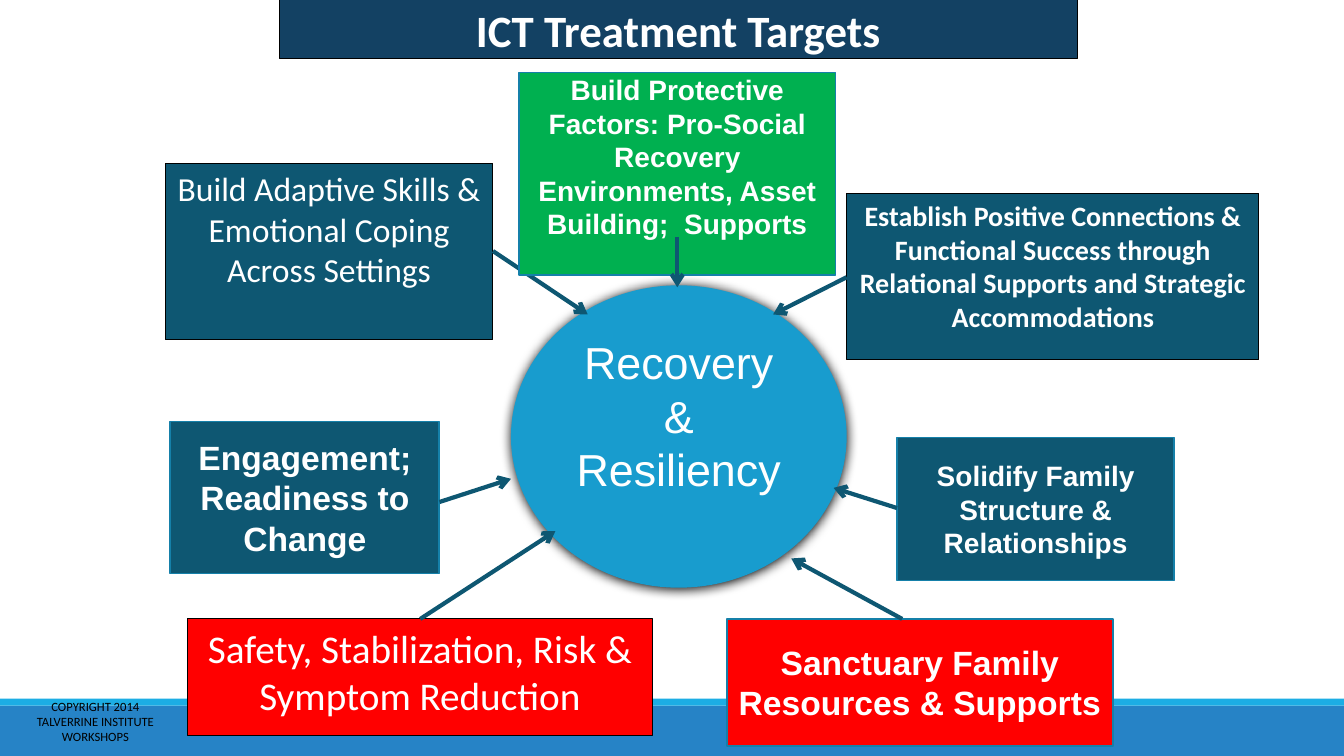
from dataclasses import dataclass
from typing import Optional

from lxml.etree import SubElement
from pptx import Presentation
from pptx.dml.color import RGBColor
from pptx.enum.shapes import MSO_CONNECTOR, MSO_SHAPE
from pptx.enum.text import MSO_ANCHOR, PP_ALIGN
from pptx.oxml.ns import qn
from pptx.shapes.autoshape import Shape
from pptx.slide import Slide
from pptx.util import Pt


@dataclass(frozen=True)
class Theme:
    teal: str = "0E5772"
    red: str = "FF0000"
    green: str = "00B050"
    hub: str = "189CCE"
    navy: str = "134163"
    footer: str = "2683C6"
    footer_edge: str = "1CADE4"
    rim: str = "1580A9"
    black: str = "000000"
    white: str = "FFFFFF"
    serene: str = "Calibri"
    plain: str = "Arial"
    tiny: float = 9
    small: float = 20
    medium: float = 24
    large: float = 28
    title: float = 32


THEME = Theme()


@dataclass(frozen=True)
class Area:
    left: float
    top: float
    width: float
    height: float


@dataclass(frozen=True)
class Arrow:
    start: tuple[float, float]
    end: tuple[float, float]


@dataclass(frozen=True)
class Target:
    text: str
    area: Area
    arrow: Arrow
    size: float
    fill: str = THEME.teal
    font: str = THEME.plain
    bold: bool = True
    line: str = THEME.rim
    line_width: float = 1.25
    anchor: MSO_ANCHOR = MSO_ANCHOR.MIDDLE
    inset: float = 3.6


# Targets around the hub, from back to front
TARGETS = [
    Target("Build Adaptive Skills & Emotional Coping Across Settings",
           Area(118, 116.6, 234, 126), Arrow((352.1, 179.3), (419.8, 224.6)),
           THEME.medium, font=THEME.serene, bold=False,
           line=THEME.black, line_width=0.75, anchor=MSO_ANCHOR.TOP),
    Target("Establish Positive Connections & Functional Success through "
           "Relational Supports and Strategic Accommodations",
           Area(604.8, 138.2, 294.5, 118.8), Arrow((604.8, 198), (552.2, 224.6)),
           THEME.small, font=THEME.serene,
           line=THEME.black, line_width=0.75, anchor=MSO_ANCHOR.TOP),
    Target("Safety, Stabilization, Risk & Symptom Reduction",
           Area(133.9, 442.1, 331.9, 83.5), Arrow((300.2, 442.1), (396.7, 379.4)),
           THEME.large, fill=THEME.red, font=THEME.serene, bold=False,
           line=THEME.black, line_width=0.75, anchor=MSO_ANCHOR.TOP),
    Target("Engagement; Readiness to Change",
           Area(121.7, 301, 192.2, 108.7), Arrow((313.9, 358.6), (365, 342)),
           THEME.medium),
    Target("Solidify Family Structure & Relationships",
           Area(640.8, 312.5, 198, 102.2), Arrow((640.8, 362.9), (595.4, 348.5)),
           THEME.small),
    Target("Build Protective Factors: Pro-Social Recovery Environments, "
           "Asset Building;  Supports",
           Area(370.8, 51.8, 226.1, 144.7), Arrow((483.8, 169.2), (483.8, 205.2)),
           THEME.small, fill=THEME.green, anchor=MSO_ANCHOR.TOP, inset=0),
    Target("Sanctuary Family Resources & Supports",
           Area(519.1, 442.1, 275.8, 90.7), Arrow((644.4, 442.1), (565.2, 398.9)),
           THEME.medium, fill=THEME.red),
]


def color(value: str) -> RGBColor:
    return RGBColor.from_string(value)


def lengths(area: Area) -> tuple[Pt, Pt, Pt, Pt]:
    return Pt(area.left), Pt(area.top), Pt(area.width), Pt(area.height)


def write_text(box: Shape, text: str, *, size: float, font: str = THEME.serene,
               ink: str = THEME.white, bold: bool = False,
               anchor: MSO_ANCHOR = MSO_ANCHOR.TOP, inset: float = 3.6) -> None:
    frame = box.text_frame
    frame.word_wrap = True
    frame.vertical_anchor = anchor
    frame.margin_top = frame.margin_bottom = Pt(inset)
    frame.text = text
    for para in frame.paragraphs:
        para.alignment = PP_ALIGN.CENTER
        for span in para.runs:
            span.font.size = Pt(size)
            span.font.name = font
            span.font.bold = bold
            span.font.color.rgb = color(ink)


def add_box(page: Slide, area: Area, fill: str, *, line: Optional[str] = None,
            line_width: float = 0.75, kind: MSO_SHAPE = MSO_SHAPE.RECTANGLE) -> Shape:
    box = page.shapes.add_shape(kind, *lengths(area))
    box.shadow.inherit = False
    box.fill.solid()
    box.fill.fore_color.rgb = color(fill)
    if line:
        box.line.color.rgb = color(line)
        box.line.width = Pt(line_width)
    else:
        box.line.fill.background()
    return box


def add_glow_shadow(box: Shape) -> None:
    effects = box._element.spPr.find(qn("a:effectLst"))
    shadow = SubElement(effects, qn("a:outerShdw"), blurRad=str(Pt(8.5)),
                        dist=str(Pt(1)), dir="5400000", rotWithShape="0")
    SubElement(shadow, qn("a:srgbClr"), val=THEME.black)


def add_arrow(page: Slide, arrow: Arrow) -> None:
    ends = [Pt(value) for value in arrow.start + arrow.end]
    connector = page.shapes.add_connector(MSO_CONNECTOR.STRAIGHT, *ends)
    connector.line.color.rgb = color(THEME.teal)
    connector.line.width = Pt(3)
    SubElement(connector.line._get_or_add_ln(), qn("a:tailEnd"), type="arrow")
    SubElement(connector._element.spPr, qn("a:effectLst"))


def add_target(page: Slide, target: Target) -> None:
    box = add_box(page, target.area, target.fill,
                  line=target.line, line_width=target.line_width)
    write_text(box, target.text, size=target.size, font=target.font,
               bold=target.bold, anchor=target.anchor, inset=target.inset)
    add_arrow(page, target.arrow)


def main() -> None:
    deck = Presentation()
    deck.slide_width, deck.slide_height = Pt(960), Pt(540)
    page = deck.slides.add_slide(deck.slide_layouts[6])

    # Footer band
    add_box(page, Area(0, 504, 960, 36), THEME.footer)
    add_box(page, Area(0, 499, 960, 5), THEME.footer_edge)
    notice = page.shapes.add_textbox(*lengths(Area(2.2, 498.2, 131.8, 34.6)))
    write_text(notice, "COPYRIGHT 2014\nTALVERRINE INSTITUTE WORKSHOPS",
               size=THEME.tiny, ink=THEME.black, anchor=MSO_ANCHOR.MIDDLE)

    # Title
    title = add_box(page, Area(199.4, -1.4, 570.2, 43.2), THEME.navy, line=THEME.black)
    write_text(title, "ICT Treatment Targets", size=THEME.title, bold=True)

    # Hub
    hub = add_box(page, Area(365, 203.8, 239.8, 216), THEME.hub, kind=MSO_SHAPE.OVAL)
    add_glow_shadow(hub)
    write_text(hub, "Recovery & Resiliency", size=THEME.title, font=THEME.plain)

    # Targets with their arrows
    for target in TARGETS:
        add_target(page, target)

    deck.save("out.pptx")


if __name__ == "__main__":
    main()
